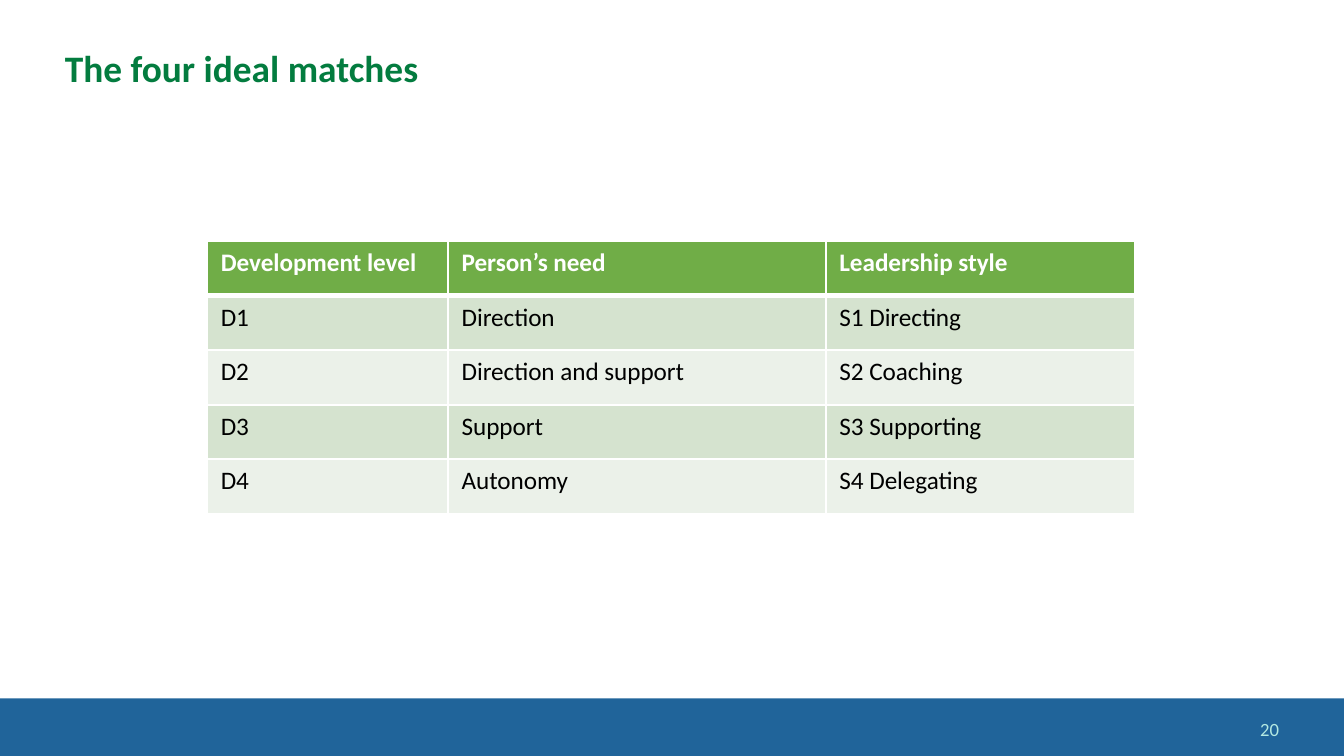
import dataclasses

import lxml.etree
import pptx
import pptx.dml.color
import pptx.enum.shapes
import pptx.enum.text
import pptx.oxml.ns
import pptx.util

Cm = pptx.util.Cm
Pt = pptx.util.Pt
RGBColor = pptx.dml.color.RGBColor
Align = pptx.enum.text.PP_ALIGN
Anchor = pptx.enum.text.MSO_ANCHOR

FONT = "Calibri"
WHITE = RGBColor(0xFF, 0xFF, 0xFF)
BLACK = RGBColor(0x00, 0x00, 0x00)
BLUE = RGBColor(0x20, 0x64, 0x9A)
MINT = RGBColor(0xB4, 0xE9, 0xE2)
GREEN = RGBColor(0x03, 0x7C, 0x3F)
HEAD = RGBColor(0x70, 0xAD, 0x47)
BANDS = (RGBColor(0xD5, 0xE3, 0xCF), RGBColor(0xEB, 0xF1, 0xE9))

WIDE, HIGH = 25.4, 14.29
COLS = (4.55, 7.14, 5.84)
ROW = 1.03


@dataclasses.dataclass
class Match:
    level: str
    need: str
    style: str


TITLES = Match("Development level", "Person’s need", "Leadership style")
MATCHES = [
    Match("D1", "Direction", "S1 Directing"),
    Match("D2", "Direction and support", "S2 Coaching"),
    Match("D3", "Support", "S3 Supporting"),
    Match("D4", "Autonomy", "S4 Delegating"),
]


def write(frame, text: str, *, size: float, color: RGBColor, bold: bool = False,
          align=Align.LEFT, anchor=Anchor.TOP, space: float = 1.0) -> None:
    frame.word_wrap = True
    frame.vertical_anchor = anchor
    para = frame.paragraphs[0]
    para.alignment = align
    para.line_spacing = space
    run = para.add_run()
    run.text = text
    run.font.name = FONT
    run.font.size = Pt(size)
    run.font.bold = bold
    run.font.color.rgb = color


def edge(cell, side: str, width: float) -> None:
    qn = pptx.oxml.ns.qn
    props = cell._tc.get_or_add_tcPr()
    line = lxml.etree.SubElement(props, qn(f"a:ln{side}"), w=str(Pt(width)))
    fill = lxml.etree.SubElement(line, qn("a:solidFill"))
    lxml.etree.SubElement(fill, qn("a:srgbClr"), val=str(WHITE))


def draw_row(table, row: int, match: Match) -> None:
    top = row == 0
    table.rows[row].height = Cm(ROW)
    for col, text in enumerate(dataclasses.astuple(match)):
        cell = table.cell(row, col)
        # The rule under the header is thicker than the other borders
        edge(cell, "L", 1)
        edge(cell, "R", 1)
        edge(cell, "T", 3 if row == 1 else 1)
        edge(cell, "B", 3 if top else 1)
        cell.fill.solid()
        cell.fill.fore_color.rgb = HEAD if top else BANDS[(row - 1) % 2]
        write(cell.text_frame, text, size=13.5, bold=top,
              color=WHITE if top else BLACK)


def main() -> None:
    deck = pptx.Presentation()
    deck.slide_width, deck.slide_height = Cm(WIDE), Cm(HIGH)
    slide = deck.slides.add_slide(deck.slide_layouts[5])

    # Footer band
    band = slide.shapes.add_shape(pptx.enum.shapes.MSO_SHAPE.RECTANGLE,
                                  0, Cm(13.2), Cm(WIDE), Cm(HIGH - 13.2))
    band.shadow.inherit = False
    band.fill.solid()
    band.fill.fore_color.rgb = BLUE
    band.line.fill.background()

    # Title
    title = slide.shapes.title
    title.left, title.top = Cm(0.97), Cm(0.36)
    title.width, title.height = Cm(23.45), Cm(1.93)
    write(title.text_frame, "The four ideal matches", size=20, color=GREEN,
          bold=True, anchor=Anchor.MIDDLE, space=0.9)

    # Page number
    page = slide.shapes.add_textbox(Cm(18.7), Cm(13.41), Cm(5.72), Cm(0.76))
    write(page.text_frame, "20", size=10, color=MINT,
          align=Align.RIGHT, anchor=Anchor.MIDDLE)

    # Table of matches
    rows = [TITLES, *MATCHES]
    table = slide.shapes.add_table(len(rows), len(COLS), Cm(3.92), Cm(4.56),
                                   Cm(sum(COLS)), Cm(ROW * len(rows))).table
    for col, width in zip(table.columns, COLS):
        col.width = Cm(width)
    for row, match in enumerate(rows):
        draw_row(table, row, match)

    deck.save("out.pptx")


if __name__ == "__main__":
    main()
